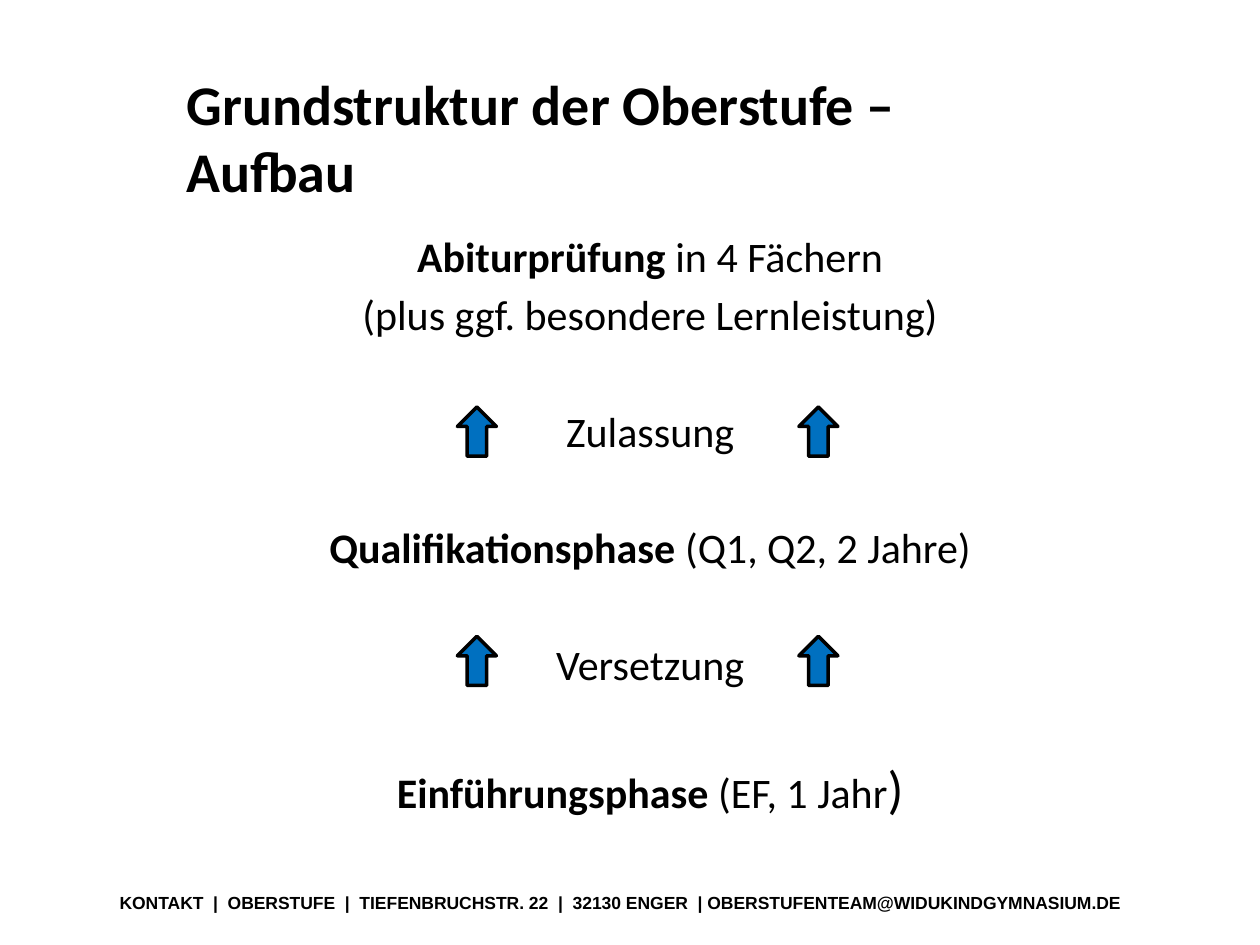
from pptx import Presentation
from pptx import util as u
from pptx.dml import color
from pptx.enum import shapes, text
from pptx.oxml import xmlchemy

COLORS = {"text": "000000", "arrow": "0070C0", "outline": "000000"}
TITLE = {"name": "Calibri", "size": u.Pt(32), "bold": True}
BODY = {"name": "Calibri", "size": u.Pt(24), "bold": False}
STRONG = {**BODY, "bold": True}
LARGE = {**BODY, "size": u.Pt(30)}
FOOTER = {"name": "Arial", "size": u.Pt(10), "bold": True}

STEPS = [
    (0, [("Abiturprüfung", STRONG), (" in 4 Fächern", BODY)]),
    (4.3, [("(plus ggf. besondere Lernleistung)", BODY)]),
    (37.9, [("Zulassung", BODY)]),
    (37.9, [("Qualifikationsphase", STRONG), (" (Q1, Q2, 2 Jahre)", BODY)]),
    (37.9, [("Versetzung", BODY)]),
    (38.5, [("Einführungsphase", STRONG), (" (EF, 1 Jahr", BODY), (")", LARGE)]),
]


class SlideBuilder:
    def __init__(self, presentation):
        layout = presentation.slide_layouts[1]
        self.slide = presentation.slides.add_slide(layout)

    def place(self, shape, box):
        for name, value in zip(("left", "top", "width", "height"), box):
            setattr(shape, name, u.Inches(value))

    def prepare_frame(self, shape, anchor):
        frame = shape.text_frame
        values = {"word_wrap": True, "auto_size": text.MSO_AUTO_SIZE.NONE,
                  "vertical_anchor": anchor}
        for name, value in values.items():
            setattr(frame, name, value)
        return frame

    def style(self, font, values):
        for name, value in values.items():
            setattr(font, name, value)
        font.color.rgb = color.RGBColor.from_string(COLORS["text"])

    def title(self, wording, box):
        shape = self.slide.shapes.title
        self.place(shape, box)
        frame = self.prepare_frame(shape, text.MSO_ANCHOR.TOP)
        frame.text = wording
        paragraph = frame.paragraphs[0]
        paragraph.alignment = text.PP_ALIGN.LEFT
        for run in paragraph.runs:
            self.style(run.font, TITLE)

    def body(self, steps, box):
        shape = self.slide.placeholders[1]
        self.place(shape, box)
        frame = self.prepare_frame(shape, text.MSO_ANCHOR.TOP)
        for index, (space, pieces) in enumerate(steps):
            paragraph = frame.add_paragraph() if index else frame.paragraphs[0]
            properties = paragraph._p.get_or_add_pPr()
            properties.set("marL", "0")
            properties.set("indent", "0")
            properties.append(xmlchemy.OxmlElement("a:buNone"))
            paragraph.alignment = text.PP_ALIGN.CENTER
            paragraph.space_before = u.Pt(space)
            for wording, values in pieces:
                run = paragraph.add_run()
                run.text = wording
                self.style(run.font, values)

    def footer(self, wording, box):
        shape = self.slide.shapes.add_textbox(*map(u.Inches, box))
        frame = self.prepare_frame(shape, text.MSO_ANCHOR.BOTTOM)
        for side in ("left", "top", "right", "bottom"):
            setattr(frame, f"margin_{side}", 0)
        paragraph = frame.paragraphs[0]
        paragraph.alignment = text.PP_ALIGN.CENTER
        run = paragraph.add_run()
        run.text = wording
        self.style(run.font, FOOTER)

    def arrow(self, left, top):
        shape = self.slide.shapes.add_shape(
            shapes.MSO_SHAPE.UP_ARROW, *map(u.Inches, (left, top, 0.31, 0.39)))
        shape.shadow.inherit = False
        shape.fill.solid()
        shape.fill.fore_color.rgb = color.RGBColor.from_string(COLORS["arrow"])
        shape.line.color.rgb = color.RGBColor.from_string(COLORS["outline"])
        shape.line.width = u.Pt(2)


def main():
    presentation = Presentation()
    presentation.slide_width = u.Inches(10)
    presentation.slide_height = u.Inches(7.5)
    builder = SlideBuilder(presentation)
    builder.title("Grundstruktur der Oberstufe – \vAufbau", (1.38, 0.5, 7.48, 0.71))
    builder.body(STEPS, (1.46, 1.78, 7.4, 4.96))
    for top in (3.23, 5.05):
        for left in (3.63, 6.34):
            builder.arrow(left, top)
    builder.footer(
        "KONTAKT  |  OBERSTUFE  |  TIEFENBRUCHSTR. 22  |  32130 ENGER  "
        "| OBERSTUFENTEAM@WIDUKINDGYMNASIUM.DE", (0.39, 7.08, 9.06, 0.17))
    presentation.save("out.pptx")


if __name__ == "__main__":
    main()
